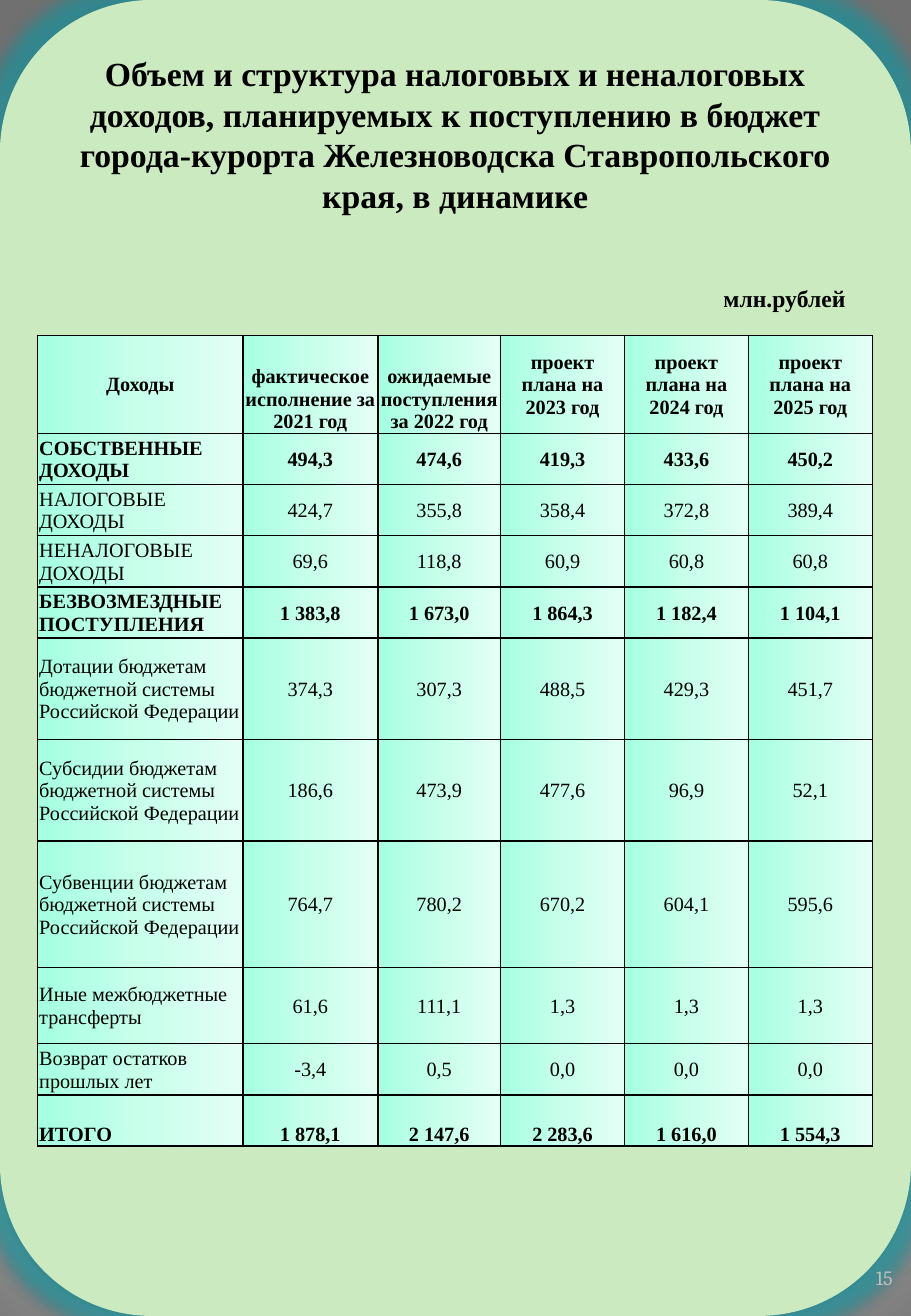
from dataclasses import dataclass

from pptx import Presentation
from pptx.dml.color import RGBColor
from pptx.enum.shapes import MSO_SHAPE
from pptx.enum.text import MSO_ANCHOR, MSO_AUTO_SIZE, PP_ALIGN
from pptx.oxml import parse_xml
from pptx.oxml.ns import nsdecls, qn
from pptx.util import Cm, Pt

LEFT, CENTER, RIGHT = PP_ALIGN.LEFT, PP_ALIGN.CENTER, PP_ALIGN.RIGHT
TOP, MIDDLE, BOTTOM = MSO_ANCHOR.TOP, MSO_ANCHOR.MIDDLE, MSO_ANCHOR.BOTTOM


@dataclass(frozen=True)
class Theme:
    font: str = "Times New Roman"
    number_font: str = "Cambria"
    title: int = 20
    unit: int = 14
    body: int = 12
    ink: str = "000000"
    number: str = "BFBFBF"
    panel: str = "CBEAC0"
    glow: str = "18A5B0"
    backdrop: tuple = ((0, "FFFFFF"), (25, "FFFFFF"), (100, "707070"))
    cell: tuple = ((0, "A5FFE1"), (50, "C7FFEB"), (100, "E3FFF5"))


THEME = Theme()
WIDTH, HEIGHT = Cm(19.05), Cm(27.51)
TITLE = ("Объем и структура налоговых и неналоговых доходов, планируемых "
         "к поступлению в бюджет города-курорта Железноводска "
         "Ставропольского края, в динамике")
HEADER = ["Доходы", "фактическое исполнение за 2021 год",
          "ожидаемые поступления за 2022 год", "проект плана на 2023 год",
          "проект плана на 2024 год", "проект плана на 2025 год"]
INCOME = [
    ["СОБСТВЕННЫЕ ДОХОДЫ", "494,3", "474,6", "419,3", "433,6", "450,2"],
    ["НАЛОГОВЫЕ ДОХОДЫ", "424,7", "355,8", "358,4", "372,8", "389,4"],
    ["НЕНАЛОГОВЫЕ ДОХОДЫ", "69,6", "118,8", "60,9", "60,8", "60,8"],
    ["БЕЗВОЗМЕЗДНЫЕ ПОСТУПЛЕНИЯ",
     "1 383,8", "1 673,0", "1 864,3", "1 182,4", "1 104,1"],
    ["Дотации бюджетам бюджетной системы Российской Федерации",
     "374,3", "307,3", "488,5", "429,3", "451,7"],
    ["Субсидии бюджетам бюджетной системы Российской Федерации",
     "186,6", "473,9", "477,6", "96,9", "52,1"],
    ["Субвенции бюджетам бюджетной системы Российской Федерации",
     "764,7", "780,2", "670,2", "604,1", "595,6"],
    ["Иные межбюджетные трансферты", "61,6", "111,1", "1,3", "1,3", "1,3"],
    ["Возврат остатков прошлых лет", "-3,4", "0,5", "0,0", "0,0", "0,0"],
    ["ИТОГО", "1 878,1", "2 147,6", "2 283,6", "1 616,0", "1 554,3"],
]
COL_WIDTHS = [4.29, 2.82, 2.57, 2.59, 2.59, 2.59]
ROW_HEIGHTS = [2.05] + [1.07] * 4 + [2.12, 2.12, 2.65, 1.59, 1.07, 1.07]
BOLD_ROWS = {0, 1, 4, 10}
BOTTOM_CELLS = {(0, 1), (0, 2)} | {(10, col) for col in range(6)}


def write(tf, text, size, align, bold=True, font=THEME.font, color=THEME.ink):
    tf.text = text
    p = tf.paragraphs[0]
    p.alignment = align
    f = p.runs[0].font
    f.name, f.size, f.bold = font, Pt(size), bold
    f.color.rgb = RGBColor.from_string(color)


def gradient(stops, direction):
    """Return a gradFill element; direction is its a:lin or a:path child."""
    gs = "".join(f'<a:gs pos="{pos * 1000}"><a:srgbClr val="{color}"/></a:gs>'
                 for pos, color in stops)
    return parse_xml(f'<a:gradFill {nsdecls("a")} rotWithShape="1">'
                     f'<a:gsLst>{gs}</a:gsLst>{direction}</a:gradFill>')


def set_background(s):
    s.background.fill.solid()
    solid = s.element.find(".//" + qn("a:solidFill"))
    solid.getparent().replace(solid, gradient(
        THEME.backdrop, '<a:path path="circle"><a:fillToRect l="10000" '
        't="110000" r="10000" b="100000"/></a:path>'))


def add_panel(s):
    panel = s.shapes.add_shape(MSO_SHAPE.ROUNDED_RECTANGLE, 0, 0, WIDTH, HEIGHT)
    panel.fill.solid()
    panel.fill.fore_color.rgb = RGBColor.from_string(THEME.panel)
    panel.line.fill.background()
    panel.shadow.inherit = False
    effects = panel.element.spPr.find(qn("a:effectLst"))
    effects.append(parse_xml(
        f'<a:glow {nsdecls("a")} rad="{Pt(18)}"><a:srgbClr val="{THEME.glow}">'
        '<a:alpha val="60000"/></a:srgbClr></a:glow>'))
    effects.append(parse_xml(
        f'<a:outerShdw {nsdecls("a")} blurRad="{Pt(3.5)}" dist="{Pt(2.2)}" '
        f'dir="5400000" rotWithShape="0"><a:srgbClr val="{THEME.ink}">'
        '<a:alpha val="32000"/></a:srgbClr></a:outerShdw>'))
    s.shapes.title.element.addprevious(panel.element)


def frame_text(sp, anchor):
    """Make the text fill its frame, wrapped and without insets."""
    tf = sp.text_frame
    tf.word_wrap, tf.auto_size = True, MSO_AUTO_SIZE.NONE
    tf.vertical_anchor = anchor
    tf.margin_left = tf.margin_right = tf.margin_top = tf.margin_bottom = 0
    return tf


def add_title(s):
    sp = s.shapes.title
    sp.left, sp.top, sp.width, sp.height = Cm(1.19), Cm(1.11), Cm(16.66), Cm(3.4)
    write(frame_text(sp, TOP), TITLE, THEME.title, CENTER)


def add_label(s, box, anchor, *args, **style):
    sp = s.shapes.add_textbox(*(Cm(v) for v in box))
    write(frame_text(sp, anchor), *args, **style)


def format_cell(cell, anchor):
    cell.vertical_anchor = anchor
    cell.margin_left = cell.margin_right = cell.margin_top = Cm(0.03)
    cell.margin_bottom = 0
    tcPr = cell._tc.get_or_add_tcPr()
    for side in "LRTB":
        tcPr.append(parse_xml(
            f'<a:ln{side} {nsdecls("a")} w="{Pt(1)}"><a:solidFill>'
            f'<a:srgbClr val="{THEME.ink}"/></a:solidFill></a:ln{side}>'))
    tcPr.append(gradient(THEME.cell, '<a:lin ang="0" scaled="0"/>'))


def add_income_table(s):
    rows = [HEADER] + INCOME
    table = s.shapes.add_table(
        len(rows), len(HEADER), Cm(0.79), Cm(7.01),
        Cm(sum(COL_WIDTHS)), Cm(sum(ROW_HEIGHTS))).table
    table.first_row = table.horz_banding = False
    for column, width in zip(table.columns, COL_WIDTHS):
        column.width = Cm(width)
    for r, (row, height) in enumerate(zip(rows, ROW_HEIGHTS)):
        table.rows[r].height = Cm(height)
        for c, text in enumerate(row):
            cell = table.cell(r, c)
            align = LEFT if r and not c else CENTER
            write(cell.text_frame, text, THEME.body, align, r in BOLD_ROWS)
            format_cell(cell, BOTTOM if (r, c) in BOTTOM_CELLS else MIDDLE)


def main():
    prs = Presentation()
    prs.slide_width, prs.slide_height = WIDTH, HEIGHT
    s = prs.slides.add_slide(prs.slide_layouts[5])
    set_background(s)
    add_panel(s)
    add_title(s)
    add_label(s, (17.58, 25.48, 1.09, 1.47), BOTTOM, "15", THEME.body, RIGHT,
              bold=False, font=THEME.number_font, color=THEME.number)
    add_label(s, (15.13, 5.94, 2.8, 0.62), TOP, "млн.рублей", THEME.unit, LEFT)
    add_income_table(s)
    prs.save("out.pptx")


if __name__ == "__main__":
    main()
